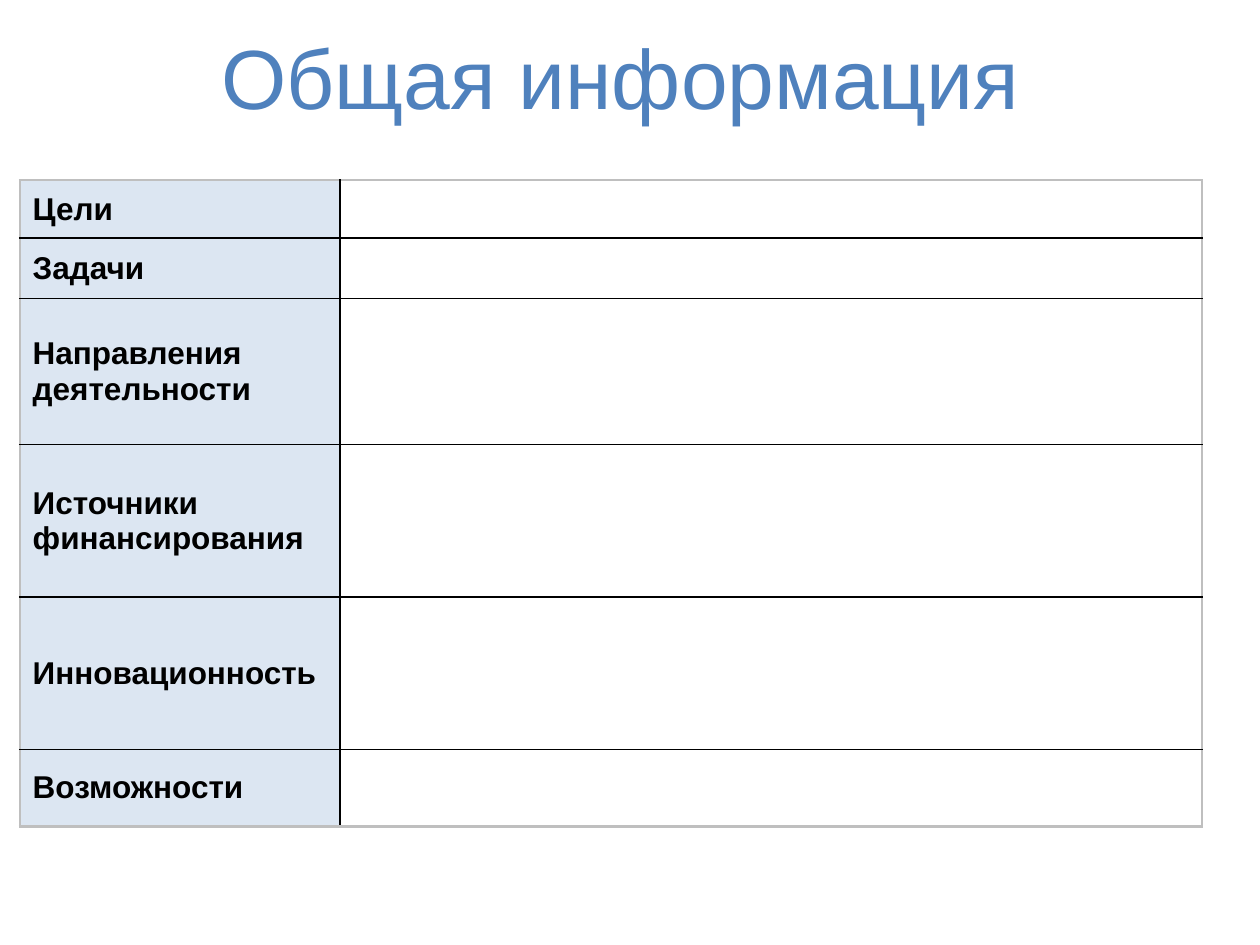
"""Build the general information slide with its two-column table."""
from lxml.etree import SubElement
from pptx import Presentation
from pptx.dml.color import RGBColor
from pptx.enum.text import MSO_ANCHOR, PP_ALIGN
from pptx.oxml.ns import qn
from pptx.util import Inches, Pt

TITLE = "Общая информация"
ROWS = [
    ("Цели", 0.46),
    ("Задачи", 0.48),
    ("Направления деятельности", 1.16),
    ("Источники финансирования", 1.21),
    ("Инновационность", 1.21),
    ("Возможности", 0.61),
]
COLS = [2.54, 6.84]
THEME = {
    "font": "Arial", "title_size": 48, "label_size": 18,
    "title": "4F81BD", "text": "000000", "label_fill": "DCE6F2", "cell_fill": "FFFFFF",
    "inner": ("000000", 1), "outer": ("BFBFBF", 1.5),
}


def add_run(p, text, size, color, bold=False):
    r = p.add_run()
    r.text = text
    r.font.name = THEME["font"]
    r.font.size = Pt(size)
    r.font.bold = bold
    r.font.color.rgb = RGBColor.from_string(color)


def set_borders(cell, edges):
    tc_pr = cell._tc.get_or_add_tcPr()
    for i, (side, is_outer) in enumerate(edges):
        color, width = THEME["outer" if is_outer else "inner"]
        ln = tc_pr.makeelement(qn(f"a:ln{side}"), {"w": str(int(Pt(width)))})
        fill = SubElement(ln, qn("a:solidFill"))
        SubElement(fill, qn("a:srgbClr"), val=color)
        tc_pr.insert(i, ln)


def add_title(slide):
    sp = slide.shapes.title
    sp.left, sp.top, sp.width, sp.height = map(Inches, (0.71, 0.08, 8.43, 0.78))
    tf = sp.text_frame
    tf.word_wrap = True
    tf.vertical_anchor = MSO_ANCHOR.TOP
    tf.margin_top, tf.margin_bottom = Inches(0.12), 0
    p = tf.paragraphs[0]
    p.alignment = PP_ALIGN.CENTER
    add_run(p, TITLE, THEME["title_size"], THEME["title"])


def add_info_table(slide):
    height = sum(h for _, h in ROWS)
    table = slide.shapes.add_table(
        len(ROWS), len(COLS), Inches(0.16), Inches(1.43), Inches(sum(COLS)), Inches(height)
    ).table
    table.first_row = table.horz_banding = False
    for col, width in zip(table.columns, COLS):
        col.width = Inches(width)
    last_row, last_col = len(ROWS) - 1, len(COLS) - 1
    for i, (label, row_height) in enumerate(ROWS):
        table.rows[i].height = Inches(row_height)
        for j in range(len(COLS)):
            cell = table.cell(i, j)
            cell.vertical_anchor = MSO_ANCHOR.MIDDLE
            cell.fill.solid()
            fill = THEME["cell_fill" if j else "label_fill"]
            cell.fill.fore_color.rgb = RGBColor.from_string(fill)
            set_borders(cell, [("L", j == 0), ("R", j == last_col),
                               ("T", i == 0), ("B", i == last_row)])
        p = table.cell(i, 0).text_frame.paragraphs[0]
        add_run(p, label, THEME["label_size"], THEME["text"], bold=True)


def main():
    prs = Presentation()
    prs.slide_width, prs.slide_height = Inches(10), Inches(7.5)
    slide = prs.slides.add_slide(prs.slide_layouts[5])
    add_title(slide)
    add_info_table(slide)
    prs.save("out.pptx")


if __name__ == "__main__":
    main()
